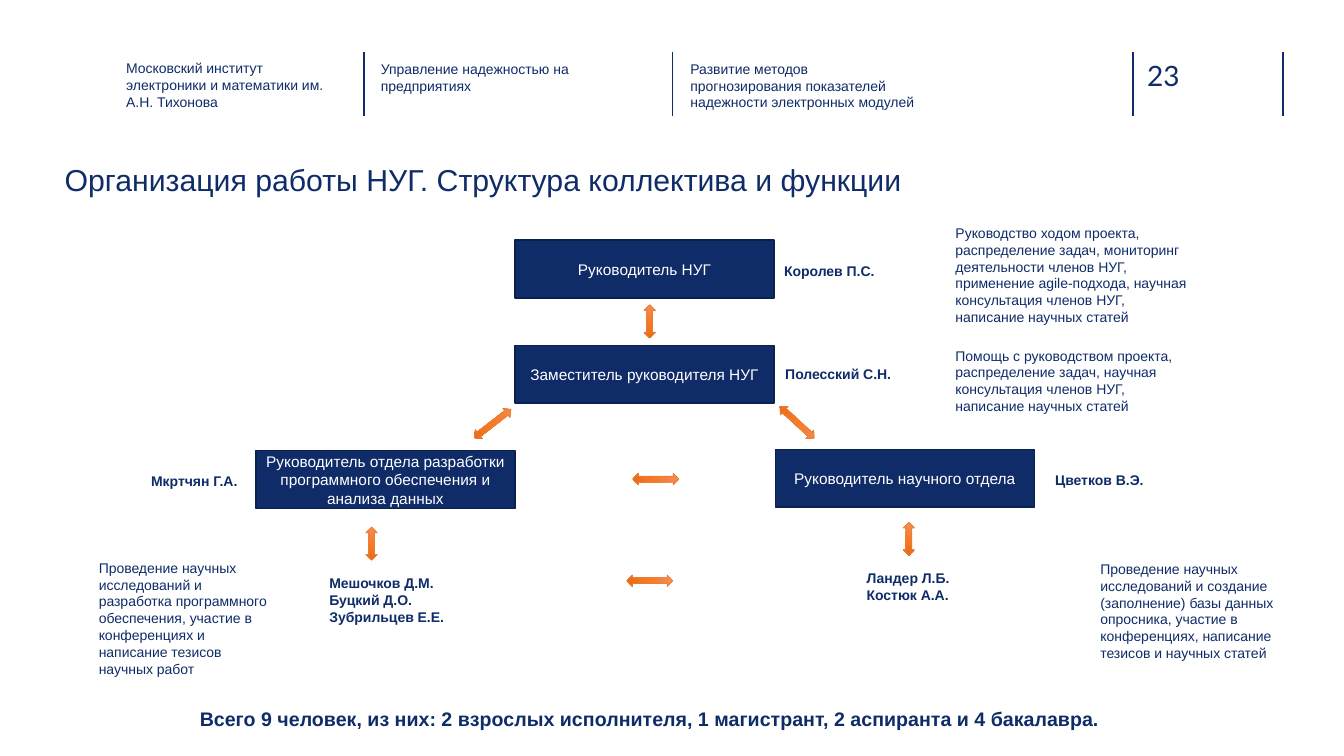
from copy import deepcopy

from pptx import Presentation
from pptx.dml.color import RGBColor
from pptx.enum.shapes import MSO_CONNECTOR, MSO_SHAPE
from pptx.enum.text import MSO_ANCHOR, PP_ALIGN
from pptx.oxml.ns import qn
from pptx.util import Cm, Pt
from lxml import etree

NAVY = RGBColor(0x0F, 0x2C, 0x68)
RULE_NAVY = RGBColor(0x10, 0x2D, 0x69)
BORDER_NAVY = RGBColor(0x0B, 0x21, 0x4D)
WHITE = RGBColor(0xFF, 0xFF, 0xFF)
ORANGE = RGBColor(0xED, 0x7D, 0x31)
ORANGE_GRADIENT = [
    (0, RGBColor(0xF1, 0x8C, 0x57)),
    (0.5, RGBColor(0xF6, 0x7B, 0x28)),
    (1, RGBColor(0xE5, 0x6C, 0x19)),
]

presentation = Presentation()
presentation.slide_width = Cm(33.87)
presentation.slide_height = Cm(19.05)
slide = presentation.slides.add_slide(presentation.slide_layouts[6])


def write_text(shape, text, size=10, font="Arial", color=NAVY, bold=False,
               align=PP_ALIGN.LEFT, anchor=MSO_ANCHOR.TOP, inset=True, spacing=None):
    frame = shape.text_frame
    frame.word_wrap = True
    frame.vertical_anchor = anchor
    if not inset:
        frame.margin_left = frame.margin_right = 0
        frame.margin_top = frame.margin_bottom = 0
    frame.text = text
    for paragraph in frame.paragraphs:
        paragraph.alignment = align
        paragraph.line_spacing = spacing
        paragraph.font.size = Pt(size)
        paragraph.font.name = font
        paragraph.font.bold = bold
        paragraph.font.color.rgb = color


def add_text(left, top, width, height, text, **text_format):
    box = slide.shapes.add_textbox(Cm(left), Cm(top), Cm(width), Cm(height))
    write_text(box, text, **text_format)


# Header rules
for x in (9.17, 16.94, 28.55, 32.33):
    rule = slide.shapes.add_connector(MSO_CONNECTOR.STRAIGHT, Cm(x), Cm(1.3), Cm(x), Cm(2.92))
    rule.line.color.rgb = RULE_NAVY
    rule.line.width = Pt(1)
    etree.SubElement(rule._element.spPr, qn("a:effectLst"))

# Header texts, page number and title
for left, top, width, text in [
    (3.18, 1.5, 5.28, "Московский институт электроники и математики им. А.Н. Тихонова"),
    (9.6, 1.52, 5.74, "Управление надежностью на предприятиях"),
    (17.4, 1.52, 5.74, "Развитие методов прогнозирования показателей надежности электронных модулей"),
]:
    add_text(left, top, width, 1.14, text, inset=False)
add_text(28.91, 1.47, 1.85, 0.86, "23", size=20, font="Lato", color=RULE_NAVY, inset=False)
add_text(1.63, 4.01, 22.07, 1.12, "Организация работы НУГ. Структура коллектива и функции",
         size=21.6, anchor=MSO_ANCHOR.MIDDLE, inset=False, spacing=0.9)

# Position boxes
for left, top, text in [
    (12.98, 6.05, "Руководитель НУГ"),
    (12.98, 8.7, "Заместитель руководителя НУГ"),
    (6.45, 11.36, "Руководитель отдела разработки программного обеспечения и анализа данных"),
    (19.54, 11.32, "Руководитель научного отдела"),
]:
    box = slide.shapes.add_shape(MSO_SHAPE.RECTANGLE, Cm(left), Cm(top), Cm(6.53), Cm(1.46))
    box.shadow.inherit = False
    box.fill.solid()
    box.fill.fore_color.rgb = NAVY
    box.line.color.rgb = BORDER_NAVY
    box.line.width = Pt(1)
    write_text(box, text, size=11, color=WHITE, align=PP_ALIGN.CENTER, anchor=MSO_ANCHOR.MIDDLE)

# Names of the staff
for left, top, width, height, names in [
    (19.51, 6.48, 3.63, 0.68, "Королев П.С."),
    (19.54, 9.08, 3.63, 0.68, "Полесский С.Н."),
    (3.56, 11.77, 3.35, 0.68, "Мкртчян Г.А."),
    (26.34, 11.75, 3.63, 0.68, "Цветков В.Э."),
    (8.05, 14.36, 5, 1.96, "Мешочков Д.М.\nБуцкий Д.О.\nЗубрильцев Е.Е."),
    (21.59, 14.23, 5.08, 1.12, "Ландер Л.Б.\nКостюк А.А."),
]:
    add_text(left, top, width, height, names, bold=True)

# Duties
for left, top, width, height, duties in [
    (23.83, 5.53, 6.53, 2.82,
     "Руководство ходом проекта, распределение задач, мониторинг деятельности членов НУГ, "
     "применение agile-подхода, научная консультация членов НУГ, написание научных статей"),
    (23.83, 8.62, 6.53, 1.96,
     "Помощь с руководством проекта, распределение задач, научная консультация членов НУГ, "
     "написание научных статей"),
    (2.24, 13.97, 5, 3.25,
     "Проведение научных исследований и разработка программного обеспечения, "
     "участие в конференциях и написание тезисов научных работ"),
    (27.48, 14, 5, 2.82,
     "Проведение научных исследований и создание (заполнение) базы данных опросника, "
     "участие в конференциях, написание тезисов и научных статей"),
]:
    add_text(left, top, width, height, duties)

# Double-headed arrows
for left, top, length, rotation in [
    (16.23, 7.68, 0.84, 0),
    (12.27, 10.09, 1.17, 52.2),
    (19.94, 10.06, 1.17, 132.6),
    (9.22, 13.28, 0.84, 0),
    (22.76, 13.16, 0.84, 0),
    (16.38, 11.49, 1.17, 90),
    (16.23, 14.05, 1.17, 90),
]:
    arrow = slide.shapes.add_shape(MSO_SHAPE.UP_DOWN_ARROW, Cm(left), Cm(top), Cm(0.29), Cm(length))
    arrow.rotation = rotation
    arrow.shadow.inherit = False
    arrow.line.color.rgb = ORANGE
    arrow.line.width = Pt(0.5)
    arrow.fill.gradient()
    arrow.fill.gradient_angle = 270
    first_stop = arrow._element.spPr.find(qn("a:gradFill")).find(qn("a:gsLst"))[0]
    first_stop.addnext(deepcopy(first_stop))
    for stop, (position, color) in zip(arrow.fill.gradient_stops, ORANGE_GRADIENT):
        stop.position = position
        stop.color.rgb = color

# Summary
add_text(1.35, 17.68, 30.05, 0.86,
         "Всего 9 человек, из них: 2 взрослых исполнителя, 1 магистрант, 2 аспиранта и 4 бакалавра.",
         size=14, bold=True, align=PP_ALIGN.CENTER)

presentation.save("out.pptx")
